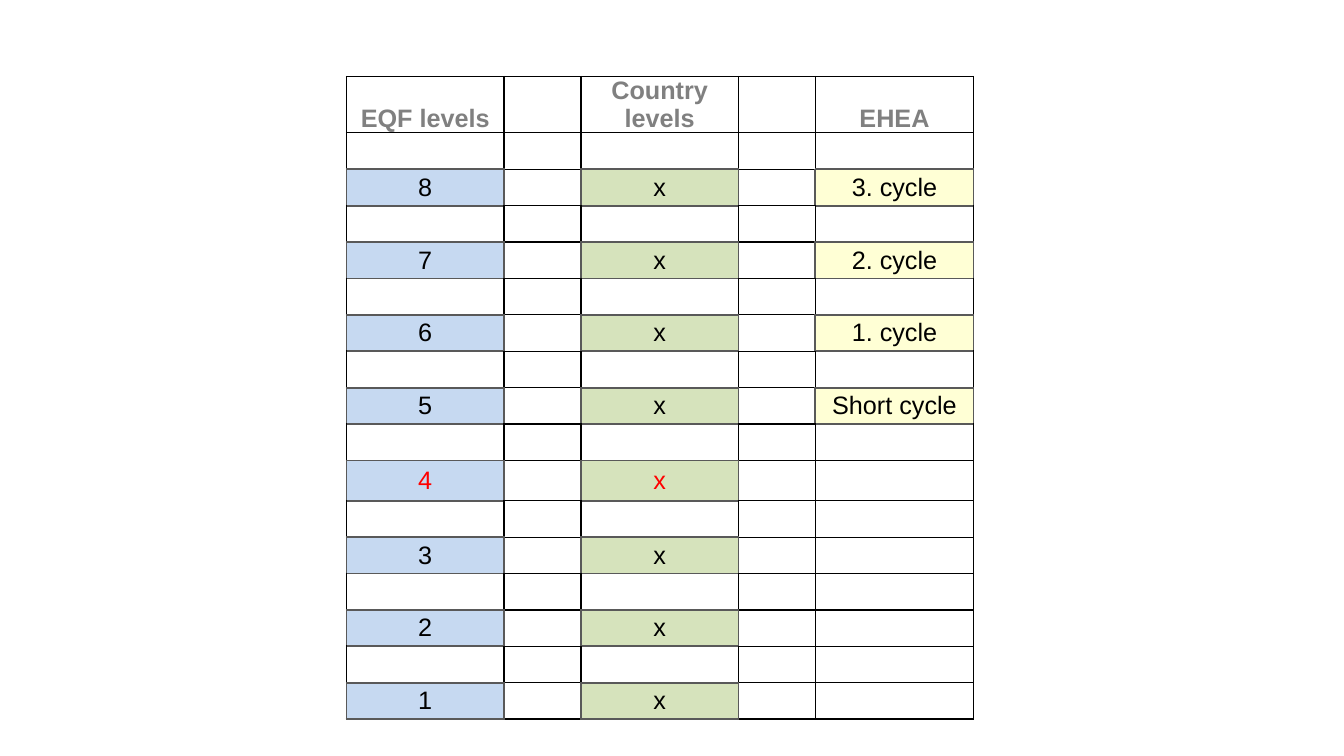
import pptx
import pptx.util
import pptx.dml.color
import pptx.enum.text
import pptx.oxml
import pptx.oxml.ns

Pt = pptx.util.Pt
align = pptx.enum.text.PP_ALIGN
anchor = pptx.enum.text.MSO_ANCHOR


def color(code):
    return pptx.dml.color.RGBColor.from_string(code)


def border(cell, side, code, width):
    space = pptx.oxml.ns.nsdecls("a")
    line = pptx.oxml.parse_xml(
        f'<a:ln{side} {space} w="{Pt(width)}"><a:solidFill>'
        f'<a:srgbClr val="{code}"/></a:solidFill></a:ln{side}>')
    cell._tc.get_or_add_tcPr().append(line)


deck = pptx.Presentation()
deck.slide_width = Pt(960)
deck.slide_height = Pt(540)
slide = deck.slides.add_slide(deck.slide_layouts[6])

widths = [112.5, 55, 112.5, 55, 113]
heights = [40] + [26] * 16
heights[10] = 28.8
fills = {0: "C6D9F1", 2: "D6E3BC", 4: "FFFFD5"}
texts = {(0, 0): "EQF levels", (0, 2): "Country levels", (0, 4): "EHEA"}
cycles = ["3. cycle", "2. cycle", "1. cycle", "Short cycle"]
for step in range(8):
    row = 2 + 2 * step
    texts[row, 0] = str(8 - step)
    texts[row, 2] = "x"
    if step < len(cycles):
        texts[row, 4] = cycles[step]
tinted = {spot for spot in texts if spot[0] > 0}

frame = slide.shapes.add_table(len(heights), len(widths), Pt(247.5), Pt(54.6),
                               Pt(sum(widths)), Pt(sum(heights)))
table = frame.table
table.first_row = False
table.horz_banding = False
for col, width in enumerate(widths):
    table.columns[col].width = Pt(width)

sides = {"L": (0, -1), "R": (0, 1), "T": (-1, 0), "B": (1, 0)}
for row, height in enumerate(heights):
    table.rows[row].height = Pt(height)
    for col in range(len(widths)):
        cell = table.cell(row, col)
        cell.margin_left = cell.margin_right = Pt(4.3)
        cell.margin_top = cell.margin_bottom = 0
        for side, (down, over) in sides.items():
            near = {(row, col), (row + down, col + over)}
            if near & tinted:
                border(cell, side, "595959", 1.5)
            else:
                border(cell, side, "000000", 1)
        if (row, col) in tinted:
            cell.fill.solid()
            cell.fill.fore_color.rgb = color(fills[col])
        else:
            cell.fill.background()
        if (row, col) not in texts:
            continue
        head = row == 0
        cell.vertical_anchor = anchor.BOTTOM if head else anchor.MIDDLE
        para = cell.text_frame.paragraphs[0]
        para.text = texts[row, col]
        para.alignment = align.CENTER
        para.space_before = Pt(8 if head else 6)
        para.space_after = Pt(2 if head else 6)
        font = para.runs[0].font
        font.name = "Arial"
        font.size = Pt(18)
        font.bold = head
        ink = "808080" if head else "FF0000" if row == 10 else "000000"
        font.color.rgb = color(ink)

deck.save("out.pptx")
